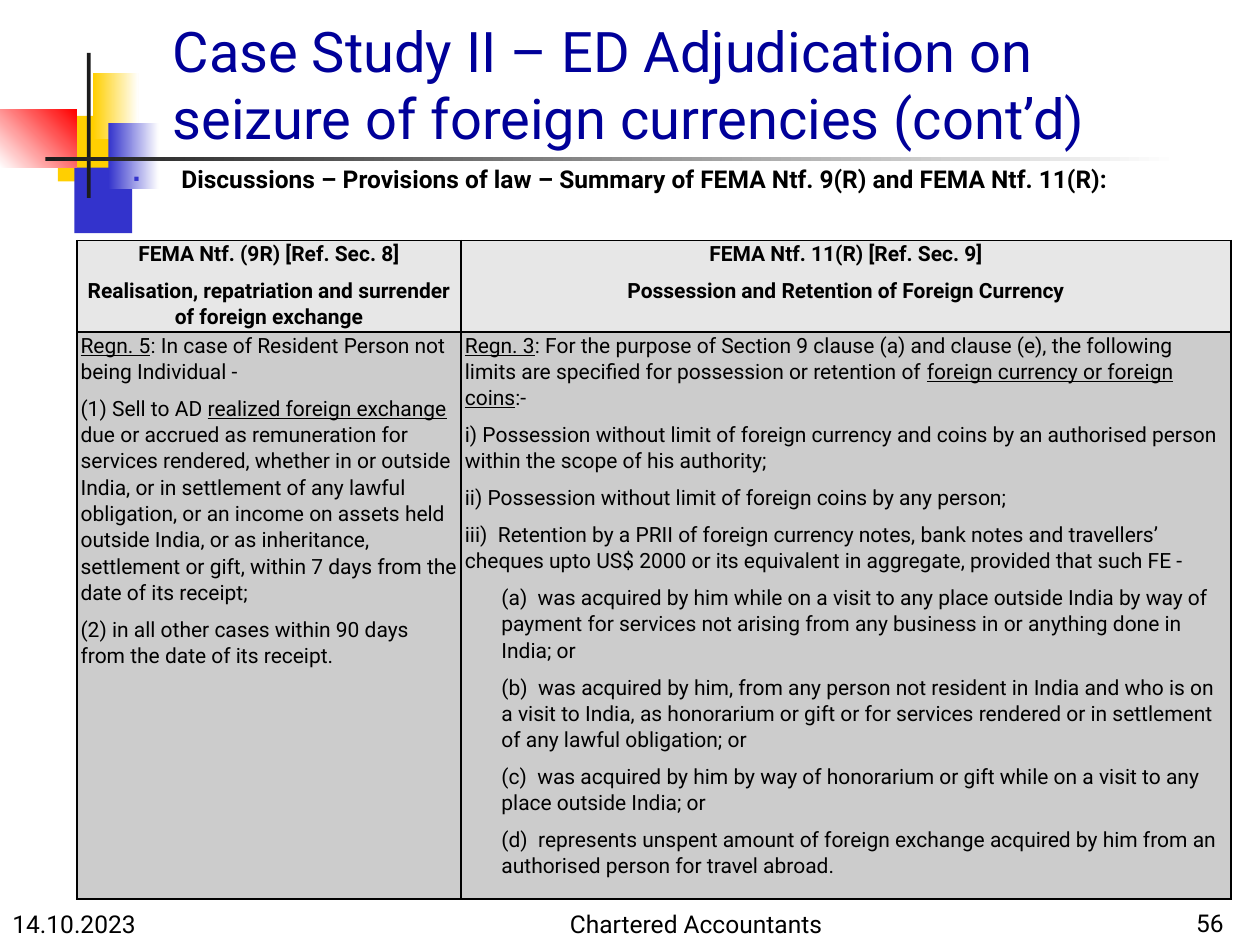
"""Build a slide that sets two foreign exchange notifications side by side."""
from lxml.etree import SubElement
from pptx import Presentation
from pptx.dml.color import RGBColor
from pptx.enum.shapes import MSO_SHAPE
from pptx.enum.text import MSO_ANCHOR as Anchor, MSO_AUTO_SIZE as Fit, PP_ALIGN as Align
from pptx.oxml.ns import qn
from pptx.util import Inches, Pt

FONT = "Roboto"
BLACK = RGBColor(0x00, 0x00, 0x00)
WHITE = RGBColor(0xFF, 0xFF, 0xFF)
NAVY = RGBColor(0x00, 0x00, 0x99)
GOLD = RGBColor(0xFF, 0xCF, 0x01)
BLUE = RGBColor(0x33, 0x33, 0xCC)
RED = RGBColor(0xFF, 0x00, 0x00)
INK = RGBColor(0x1C, 0x1C, 0x1C)
LIGHT = RGBColor(0xE7, 0xE7, 0xE7)
GREY = RGBColor(0xCC, 0xCC, 0xCC)

TITLE = "Case Study II – ED Adjudication on seizure of foreign currencies (cont’d)"
POINT = "Discussions – Provisions of law – Summary of FEMA Ntf. 9(R) and FEMA Ntf. 11(R):"

MOTIF = [
    ((0.46, 0.92, 0.48, 0.52), [GOLD], 0),
    ((0.59, 1.33, 0.46, 0.52), [BLUE], 0),
    ((0.74, 0.58, 0.36, 0.52), [GOLD, WHITE], 0),
    ((0.86, 0.98, 0.4, 0.52), [BLUE, WHITE], 0),
    ((0, 0.87, 0.61, 0.46), [WHITE, RED], 45),
    ((0.69, 0.42, 0.03, 1.15), [INK], 0),
    ((0.36, 1.25, 9, 0.03), [INK, WHITE], 0),
]

FOOTER = [
    ("56", (7.73, 6.99, 2.08, 0.5), Align.RIGHT),
    ("14.10.2023", (0, 7, 2.08, 0.5), Align.LEFT),
    ("Chartered Accountants", (3.94, 7, 3.17, 0.5), Align.CENTER),
]

COLS = [3.05, 6.11]
ROWS = [0.68, 4.5]
HEADS = [
    ["FEMA Ntf. (9R) [Ref. Sec. 8]",
     "Realisation, repatriation and surrender of foreign exchange"],
    ["FEMA Ntf. 11(R) [Ref. Sec. 9]",
     "Possession and Retention of Foreign Currency"],
]
RULES = [
    ["_Regn. 5_: In case of Resident Person not being Individual -",
     "(1) Sell to AD _realized foreign exchange _due or accrued as remuneration for "
     "services rendered, whether in or outside India, or in settlement of any lawful "
     "obligation, or an income on assets held outside India, or as inheritance, "
     "settlement or gift, within 7 days from the date of its receipt;",
     "(2) in all other cases within 90 days from the date of its receipt."],
    ["_Regn. 3_: For the purpose of Section 9 clause (a) and clause (e), the following "
     "limits are specified for possession or retention of "
     "_foreign currency or foreign coins_:-",
     "i) Possession without limit of foreign currency and coins by an authorised "
     "person within the scope of his authority;",
     "ii) Possession without limit of foreign coins by any person;",
     "iii)  Retention by a PRII of foreign currency notes, bank notes and travellers’ "
     "cheques upto US$ 2000 or its equivalent in aggregate, provided that such FE -",
     "(a)  was acquired by him while on a visit to any place outside India by way of "
     "payment for services not arising from any business in or anything done in India; or",
     "(b)  was acquired by him, from any person not resident in India and who is on a "
     "visit to India, as honorarium or gift or for services rendered or in settlement "
     "of any lawful obligation; or",
     "(c)  was acquired by him by way of honorarium or gift while on a visit to any "
     "place outside India; or",
     "(d)  represents unspent amount of foreign exchange acquired by him from an "
     "authorised person for travel abroad."],
]


def place(shape, box):
    shape.left, shape.top, shape.width, shape.height = map(Inches, box)


def style(para, size, color=BLACK, bold=False, align=Align.LEFT):
    para.alignment = align
    font = para.font
    font.name, font.size, font.bold = FONT, Pt(size), bold
    font.color.rgb = color


def draw_motif(shapes):
    for box, tones, angle in MOTIF:
        block = shapes.add_shape(MSO_SHAPE.RECTANGLE, *map(Inches, box))
        block.shadow.inherit = False
        block.line.fill.background()
        if len(tones) == 1:
            block.fill.solid()
            block.fill.fore_color.rgb = tones[0]
        else:
            block.fill.gradient()
            block.fill.gradient_angle = angle
            for stop, tone, spot in zip(block.fill.gradient_stops, tones, (0, 1)):
                stop.color.rgb, stop.position = tone, spot


def add_bullet(para):
    props = para._p.get_or_add_pPr()
    props.set("marL", str(Inches(0.38)))
    props.set("indent", str(-Inches(0.38)))
    tint = SubElement(props, qn("a:buClr"))
    SubElement(tint, qn("a:srgbClr"), val=str(BLUE))
    SubElement(props, qn("a:buSzPct"), val="60000")
    SubElement(props, qn("a:buFont"), typeface=FONT)
    SubElement(props, qn("a:buChar"), char="▪")


def fill_text(slide):
    title, body = slide.shapes.title, slide.placeholders[1]
    for holder, text, box in [(title, TITLE, (1.27, 0, 8.5, 1.25)),
                              (body, POINT, (0.96, 1.25, 8.34, 5.99))]:
        place(holder, box)
        holder.text_frame.text = text
        holder.text_frame.auto_size = Fit.NONE
        slide.shapes._spTree.append(holder._element)
    title.text_frame.vertical_anchor = Anchor.BOTTOM
    style(title.text_frame.paragraphs[0], 32, NAVY)
    para = body.text_frame.paragraphs[0]
    style(para, 14, bold=True, align=Align.JUSTIFY)
    para.space_before = para.space_after = Pt(6)
    add_bullet(para)


def add_footer(shapes):
    for text, box, align in FOOTER:
        frame = shapes.add_textbox(*map(Inches, box)).text_frame
        frame.word_wrap = True
        frame.vertical_anchor = Anchor.BOTTOM
        frame.text = text
        style(frame.paragraphs[0], 14, align=align)


def add_border(cell):
    props = cell._tc.get_or_add_tcPr()
    for side in "LRTB":
        edge = SubElement(props, qn("a:ln" + side), w=str(Pt(1)))
        paint = SubElement(edge, qn("a:solidFill"))
        SubElement(paint, qn("a:srgbClr"), val=str(BLACK))


def fill_cell(cell, lines, head):
    add_border(cell)
    cell.fill.solid()
    cell.fill.fore_color.rgb = LIGHT if head else GREY
    cell.margin_left = cell.margin_right = Inches(0.03)
    cell.margin_top = cell.margin_bottom = 0
    frame = cell.text_frame
    for i, line in enumerate(lines):
        para = frame.add_paragraph() if i else frame.paragraphs[0]
        style(para, 12, bold=head, align=Align.CENTER if head else Align.LEFT)
        para.line_spacing, para.space_after = 1.07, Pt(6)
        if line.startswith(("(a)", "(b)", "(c)", "(d)")):
            para._p.get_or_add_pPr().set("marL", str(Inches(0.29)))
        for j, part in enumerate(line.split("_")):
            if part:
                run = para.add_run()
                run.text = part
                if j % 2:
                    run.font.underline = True


def add_grid(shapes):
    box = (0.61, 1.91, sum(COLS), sum(ROWS))
    table = shapes.add_table(len(ROWS), len(COLS), *map(Inches, box)).table
    table.horz_banding = False
    for col, width in zip(table.columns, COLS):
        col.width = Inches(width)
    for row, height in zip(table.rows, ROWS):
        row.height = Inches(height)
    for r, texts in enumerate((HEADS, RULES)):
        for c, lines in enumerate(texts):
            fill_cell(table.cell(r, c), lines, r == 0)


def main():
    deck = Presentation()
    deck.slide_width, deck.slide_height = Inches(10), Inches(7.5)
    slide = deck.slides.add_slide(deck.slide_layouts[1])
    draw_motif(slide.shapes)
    fill_text(slide)
    add_footer(slide.shapes)
    add_grid(slide.shapes)
    deck.save("out.pptx")


if __name__ == "__main__":
    main()
